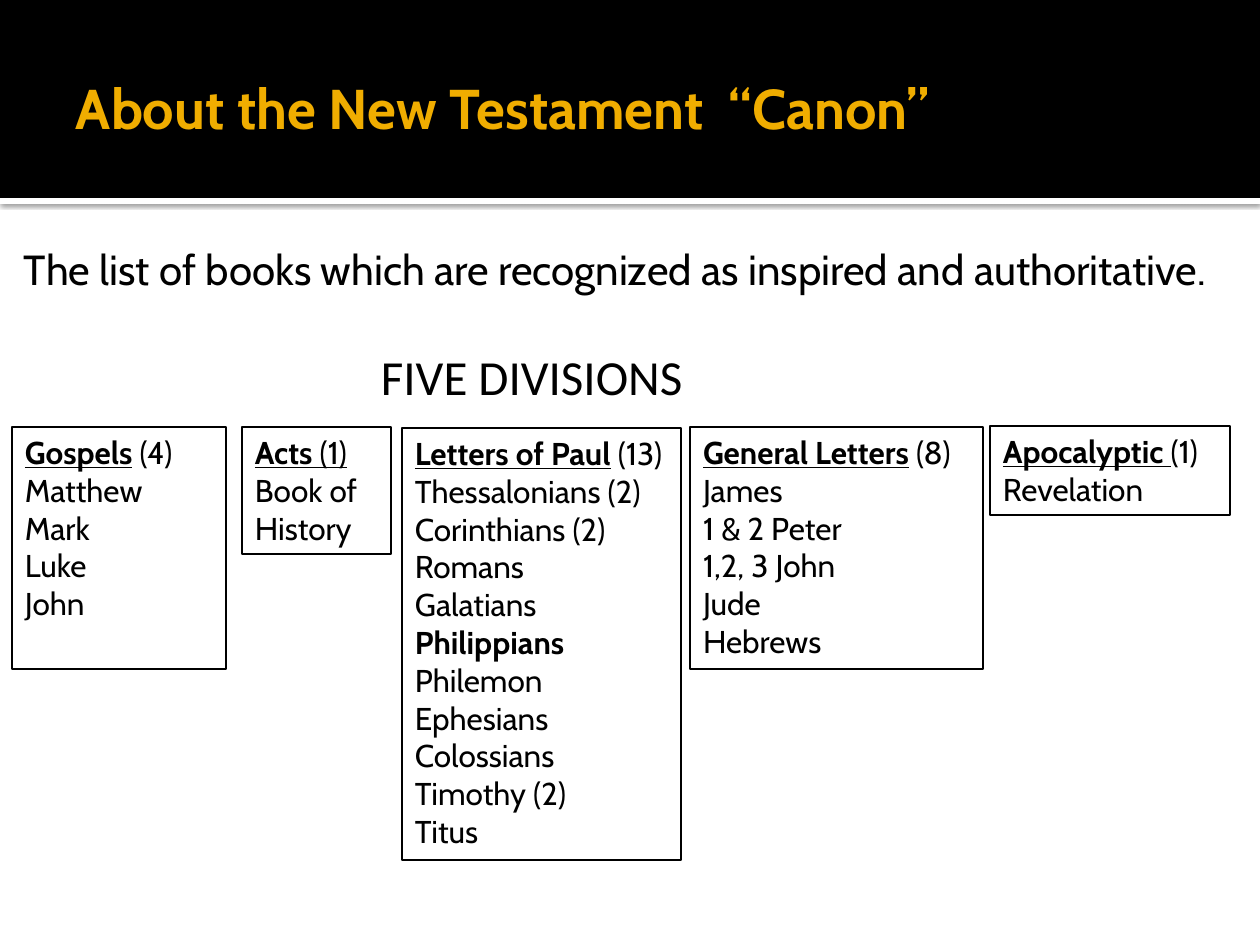
from lxml import etree
from pptx import Presentation
from pptx.dml.color import RGBColor
from pptx.enum.shapes import MSO_SHAPE
from pptx.enum.text import MSO_ANCHOR, MSO_AUTO_SIZE, PP_ALIGN
from pptx.oxml.ns import qn
from pptx.util import Emu, Pt

RECTANGLE = MSO_SHAPE.RECTANGLE
MIDDLE, TOP = MSO_ANCHOR.MIDDLE, MSO_ANCHOR.TOP
LEFT = PP_ALIGN.LEFT
NO_FIT = MSO_AUTO_SIZE.NONE

COLORS = {"black": "000000", "white": "FFFFFF", "gold": "F0AD00"}
FONT = "Cabin"
TITLE = "About the New Testament  “Canon”"
INTRO = "The list of books which are recognized as inspired and authoritative."
HEADING = "FIVE DIVISIONS"
BOLD_BOOK = "Philippians"

DIVISIONS = [
    {"at": (12, 427, 214, 242), "name": "Gospels", "count": " (4)",
     "books": ["Matthew", "Mark", "Luke", "John"]},
    {"at": (242, 427, 149, 127), "name": "Acts ", "count": "(1)",
     "underlined": True, "books": ["Book of History"]},
    {"at": (402, 428, 279, 432), "name": "Letters of Paul", "count": " (13)",
     "wrap": False,
     "books": ["Thessalonians (2)", "Corinthians (2)", "Romans", "Galatians",
               "Philippians", "Philemon", "Ephesians", "Colossians",
               "Timothy (2)", "Titus"]},
    {"at": (690, 427, 293, 242), "name": "General Letters", "count": " (8)",
     "books": ["James", "1 & 2 Peter", "1,2, 3 John", "Jude", "Hebrews"]},
    {"at": (990, 426, 240, 89), "name": "Apocalyptic ", "count": "(1)",
     "books": ["Revelation"]},
]


def px(value):
    return Emu(round(value * 914400 / 126))


def color(name):
    return RGBColor.from_string(COLORS[name])


def add_rectangle(slide, at, fill=None, line=None):
    shape = slide.shapes.add_shape(RECTANGLE, *map(px, at))
    shape.shadow.inherit = False
    if fill:
        shape.fill.solid()
        shape.fill.fore_color.rgb = color(fill)
    else:
        shape.fill.background()
    if line:
        shape.line.color.rgb = color(line)
        shape.line.width = Pt(0.75)
    else:
        shape.line.fill.background()
    return shape


def add_shadow(shape):
    effects = shape.element.spPr.find(qn("a:effectLst"))
    shadow = etree.SubElement(effects, qn("a:outerShdw"), blurRad=str(Pt(2.5)),
                              dist=str(Pt(0.8)), dir="5400000", rotWithShape="0")
    shade = etree.SubElement(shadow, qn("a:srgbClr"), val=COLORS["black"])
    etree.SubElement(shade, qn("a:alpha"), val="60000")


def set_frame(frame, anchor=TOP, insets=(13, 6, 13, 6), wrap=True):
    frame.auto_size = NO_FIT
    frame.word_wrap = wrap
    frame.vertical_anchor = anchor
    (frame.margin_left, frame.margin_top,
     frame.margin_right, frame.margin_bottom) = map(px, insets)


def style(paragraph, size, font=FONT, tint="black", bold=False):
    paragraph.alignment = LEFT
    paragraph.font.name = font
    paragraph.font.size = Pt(size)
    paragraph.font.bold = bold
    paragraph.font.color.rgb = color(tint)


def add_text(slide, at, text, size, font=FONT, **frame_options):
    frame = slide.shapes.add_textbox(*map(px, at)).text_frame
    set_frame(frame, **frame_options)
    frame.text = text
    style(frame.paragraphs[0], size, font)


def add_division(slide, division):
    frame = add_rectangle(slide, division["at"], line="black").text_frame
    set_frame(frame, wrap=division.get("wrap", True))
    header = frame.paragraphs[0]
    style(header, 18)
    name = header.add_run()
    name.text = division["name"]
    name.font.bold = name.font.underline = True
    count = header.add_run()
    count.text = division["count"]
    count.font.underline = division.get("underlined", False)
    for book in division["books"]:
        paragraph = frame.add_paragraph()
        paragraph.text = book
        style(paragraph, 18, bold=book == BOLD_BOOK)


def main():
    """Build the slide on the five divisions of the New Testament."""
    presentation = Presentation()
    presentation.slide_width, presentation.slide_height = px(1260), px(945)
    slide = presentation.slides.add_slide(presentation.slide_layouts[5])

    title = slide.shapes.title
    strip = add_rectangle(slide, (0, 198, 1260, 6), fill="white")
    add_shadow(strip)
    band = add_rectangle(slide, (0, 0, 1260, 198), fill="black")
    for shape in (strip, band):
        title.element.addprevious(shape.element)

    title.left, title.top, title.width, title.height = map(px, (63, 21, 1134, 173))
    title.text_frame.text = TITLE
    set_frame(title.text_frame, MIDDLE, (13, 6, 6, 6))
    style(title.text_frame.paragraphs[0], 32, tint="gold", bold=True)

    add_text(slide, (0, 231, 1260, 703), INTRO, 24, insets=(24, 13, 13, 6))
    for division in DIVISIONS:
        add_division(slide, division)
    add_text(slide, (368, 340, 389, 72), HEADING, 28, "Calibri", wrap=False)
    presentation.save("out.pptx")


if __name__ == "__main__":
    main()
